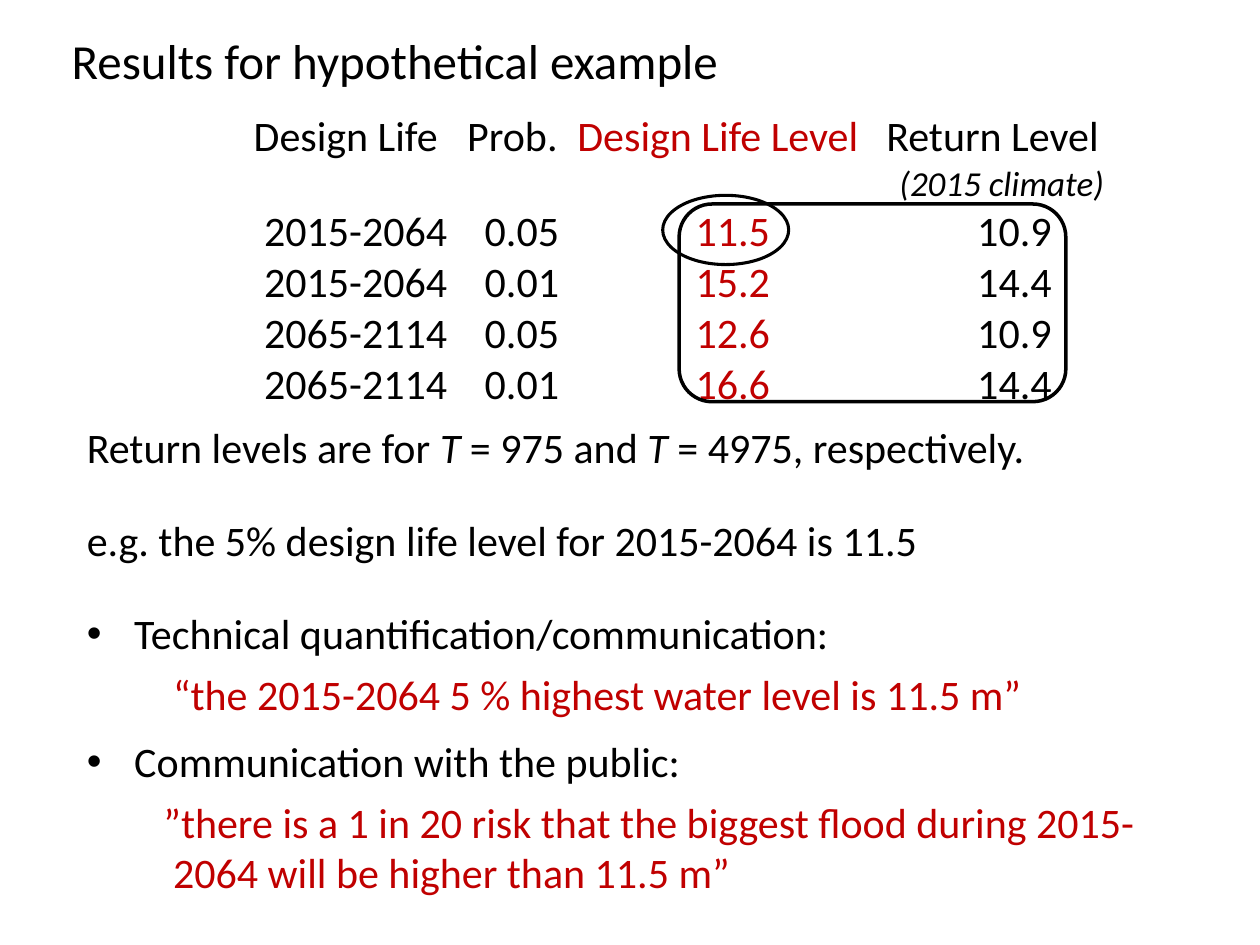
from lxml import etree
from pptx import Presentation
from pptx.dml.color import RGBColor
from pptx.enum import shapes, text
from pptx.oxml.ns import qn
from pptx.util import Pt

BLACK = RGBColor(0, 0, 0)
RED = RGBColor(0xC0, 0, 0)
FONT = "Calibri"

TITLE = "Results for hypothetical example"
# heading, colour, column width, indent of the values
COLUMNS = [
    ("Design Life", BLACK, 122, 6),
    ("Prob.", BLACK, 63, 10),
    ("Design Life Level", RED, 176.5, 67.5),
    ("Return Level", BLACK, 134, 52),
]
CLIMATE = "(2015 climate)"
RESULTS = [
    ("2015-2064", "0.05", "11.5", "10.9"),
    ("2015-2064", "0.01", "15.2", "14.4"),
    ("2065-2114", "0.05", "12.6", "10.9"),
    ("2065-2114", "0.01", "16.6", "14.4"),
]
# (text, italic) runs, space after
NOTES = [
    ([("Return levels are for ", False), ("T ", True), ("= 975 and ", False),
      ("T ", True), ("= 4975, respectively.", False)], 24),
    ([("e.g. the 5% design life level for 2015-2064 is 11.5", False)], 0),
]
# statement, quote, first-line indent of the quote
MESSAGES = [
    ("Technical quantification/communication:",
     "“the 2015-2064 5 % highest water level is 11.5 m”", 0),
    ("Communication with the public:",
     "”there is a 1 in 20 risk that the biggest flood during 2015-2064 "
     "will be higher than 11.5 m”", -5.5),
]
# preset, left, top, width, height, line width
OUTLINES = [
    (shapes.MSO_SHAPE.OVAL, 378.7, 111.6, 72, 39.6, 1.75),
    (shapes.MSO_SHAPE.ROUNDED_RECTANGLE, 388.1, 116.6, 221, 113, 2),
]
TABLE_LEFT, TABLE_TOP = 145, 64
HEADER_HEIGHT, ROW_HEIGHT = 53.7, 29.3
TEXT_LEFT, TEXT_WIDTH = 42.5, 646.5
QUOTE_INDENT = 49.2


def style(paragraph, size=24, color=BLACK, after=0):
    paragraph.font.name = FONT
    paragraph.font.size = Pt(size)
    paragraph.font.color.rgb = color
    paragraph.space_before = Pt(0)
    paragraph.space_after = Pt(after)
    paragraph.alignment = text.PP_ALIGN.LEFT


def place(shape, left, top, width, height):
    shape.left, shape.top = Pt(left), Pt(top)
    shape.width, shape.height = Pt(width), Pt(height)
    frame = shape.text_frame
    frame.word_wrap = True
    frame.auto_size = text.MSO_AUTO_SIZE.NONE
    frame.vertical_anchor = text.MSO_ANCHOR.TOP
    return frame


def indent(paragraph, left, first=0):
    """Indent a paragraph and take its bullet away."""
    properties = paragraph._p.get_or_add_pPr()
    properties.set("marL", str(Pt(left)))
    properties.set("indent", str(Pt(first)))
    etree.SubElement(properties, qn("a:buNone"))


def add_results(slide):
    width = sum(column[2] for column in COLUMNS)
    height = HEADER_HEIGHT + ROW_HEIGHT * len(RESULTS)
    table = slide.shapes.add_table(
        len(RESULTS) + 1, len(COLUMNS), Pt(TABLE_LEFT), Pt(TABLE_TOP),
        Pt(width), Pt(height)).table
    table.first_row = table.horz_banding = False
    # The "No Style, No Grid" table style
    table._tbl.tblPr.find(qn("a:tableStyleId")).text = (
        "{2D5ABB26-0587-4C30-8999-92F81FD0307C}")
    headings = [column[0] for column in COLUMNS]
    for r, values in enumerate([headings] + RESULTS):
        table.rows[r].height = Pt(ROW_HEIGHT if r else HEADER_HEIGHT)
        for c, (_, color, column_width, value_indent) in enumerate(COLUMNS):
            table.columns[c].width = Pt(column_width)
            cell = table.cell(r, c)
            cell.fill.background()
            cell.margin_top = cell.margin_bottom = cell.margin_right = 0
            cell.margin_left = Pt(value_indent if r else 0)
            cell.text = values[c]
            style(cell.text_frame.paragraphs[0], color=color)
    climate = table.cell(0, len(COLUMNS) - 1).text_frame.add_paragraph()
    climate.text = CLIMATE
    style(climate, size=20)
    climate.font.italic = True
    climate._p.get_or_add_pPr().set("marL", str(Pt(7.5)))


def add_notes(slide):
    box = slide.shapes.add_textbox(0, 0, 0, 0)
    frame = place(box, TEXT_LEFT, 237.5, TEXT_WIDTH, 94)
    for i, (runs, after) in enumerate(NOTES):
        paragraph = frame.add_paragraph() if i else frame.paragraphs[0]
        style(paragraph, after=after)
        for words, italic in runs:
            run = paragraph.add_run()
            run.text = words
            run.font.italic = italic


def fill_messages(body):
    frame = place(body, TEXT_LEFT, 343.5, TEXT_WIDTH, 175)
    for i, (statement, quote, first) in enumerate(MESSAGES):
        paragraph = frame.add_paragraph() if i else frame.paragraphs[0]
        paragraph.text = statement
        style(paragraph, after=6)
        paragraph = frame.add_paragraph()
        paragraph.text = quote
        style(paragraph, color=RED, after=9.5)
        indent(paragraph, QUOTE_INDENT, first)


def main():
    deck = Presentation()
    deck.slide_width, deck.slide_height = Pt(720), Pt(540)
    slide = deck.slides.add_slide(deck.slide_layouts[1])

    title = place(slide.shapes.title, 33.8, 13.7, 657.4, 41)
    title.text = TITLE
    style(title.paragraphs[0], size=28)

    add_results(slide)
    add_notes(slide)
    fill_messages(slide.placeholders[1])
    for preset, left, top, width, height, line_width in OUTLINES:
        outline = slide.shapes.add_shape(
            preset, Pt(left), Pt(top), Pt(width), Pt(height))
        outline.shadow.inherit = False
        outline.fill.background()
        outline.line.color.rgb = BLACK
        outline.line.width = Pt(line_width)

    deck.save("out.pptx")


if __name__ == "__main__":
    main()
